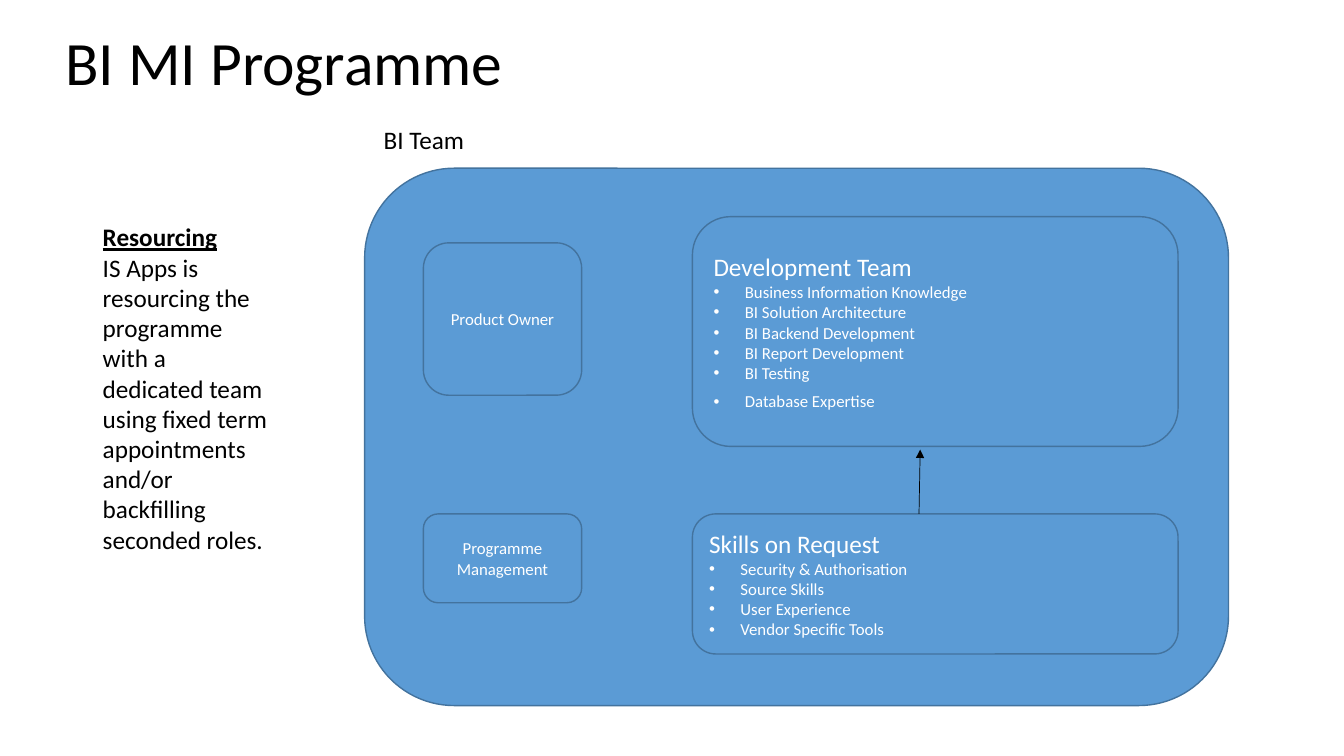
"""Build the BI MI Programme resourcing slide."""
from dataclasses import dataclass

from lxml.etree import SubElement
from pptx import Presentation
from pptx.dml.color import RGBColor
from pptx.enum.shapes import MSO_CONNECTOR, MSO_SHAPE
from pptx.enum.text import MSO_ANCHOR, PP_ALIGN
from pptx.oxml.ns import qn
from pptx.util import Cm, Pt

BLACK, WHITE, BLUE, EDGE = "000000", "FFFFFF", "5B9BD5", "43739E"
INDENT = Cm(0.79)


@dataclass
class Box:
    left: float
    top: float
    width: float
    height: float
    label: str = ""
    head: str = ""
    items: tuple[str, ...] = ()
    gap: float = 0

    def place(self) -> tuple[Cm, Cm, Cm, Cm]:
        return Cm(self.left), Cm(self.top), Cm(self.width), Cm(self.height)


def color(code: str) -> RGBColor:
    return RGBColor.from_string(code)


def write(frame, text: str, *, size: float = 18, ink: str = BLACK,
          bold: bool = False, under: bool = False, align=PP_ALIGN.LEFT,
          bullet: bool = False, before: float = 0, lines: float = 1.0) -> None:
    first = frame.paragraphs[0]
    para = frame.add_paragraph() if first.runs else first
    para.alignment = align
    para.line_spacing = lines
    para.space_before = Pt(before)
    run = para.add_run()
    run.text = text
    font = run.font
    font.name, font.size = "Calibri", Pt(size)
    font.bold, font.underline = bold, under
    font.color.rgb = color(ink)
    if bullet:
        props = para._p.get_or_add_pPr()
        props.set("marL", str(INDENT))
        props.set("indent", str(-INDENT))
        SubElement(props, qn("a:buFont")).set("typeface", "Arial")
        SubElement(props, qn("a:buChar")).set("char", "•")


def note(slide, box: Box, wrap: bool = True, anchor=MSO_ANCHOR.TOP):
    frame = slide.shapes.add_textbox(*box.place()).text_frame
    frame.word_wrap = wrap
    frame.vertical_anchor = anchor
    return frame


def draw(slide, box: Box) -> None:
    shape = slide.shapes.add_shape(MSO_SHAPE.ROUNDED_RECTANGLE, *box.place())
    shape.shadow.inherit = False
    shape.fill.solid()
    shape.fill.fore_color.rgb = color(BLUE)
    shape.line.color.rgb = color(EDGE)
    shape.line.width = Pt(1)
    frame = shape.text_frame
    frame.word_wrap = True
    frame.vertical_anchor = MSO_ANCHOR.MIDDLE
    if box.label:
        write(frame, box.label, size=12, ink=WHITE, align=PP_ALIGN.CENTER)
    if box.head:
        write(frame, box.head, ink=WHITE)
    for item in box.items:
        last = item == box.items[-1]
        write(frame, item, size=12, ink=WHITE, bullet=True,
              before=box.gap if last else 0)


def arrow(slide, x1: float, y1: float, x2: float, y2: float) -> None:
    link = slide.shapes.add_connector(
        MSO_CONNECTOR.STRAIGHT, Cm(x1), Cm(y1), Cm(x2), Cm(y2))
    link.line.color.rgb = color(BLACK)
    link.line.width = Pt(0.5)
    SubElement(link.line._get_or_add_ln(), qn("a:tailEnd")).set("type", "triangle")
    SubElement(link._element.spPr, qn("a:effectLst"))


ROLE, TEAM, LOWER = (10.67, 3.99), (17.45, 12.24), 12.95
BOXES = (
    Box(9.19, 4.24, 21.77, 13.54),
    Box(ROLE[0], 6.12, ROLE[1], 3.84, label="Product Owner"),
    Box(ROLE[0], LOWER, ROLE[1], 2.24, label="Programme Management"),
    Box(TEAM[0], 5.46, TEAM[1], 5.79, head="Development Team", gap=6, items=(
        "Business Information Knowledge", "BI Solution Architecture",
        "BI Backend Development", "BI Report Development", "BI Testing",
        "Database Expertise")),
    Box(TEAM[0], LOWER, TEAM[1], 3.53, head="Skills on Request", items=(
        "Security & Authorisation", "Source Skills", "User Experience",
        "Vendor Specific Tools")),
)


def main() -> None:
    deck = Presentation()
    deck.slide_width, deck.slide_height = Cm(33.87), Cm(19.05)
    slide = deck.slides.add_slide(deck.slide_layouts[6])
    title = note(slide, Box(1.4, -0.18, 29.21, 3.68), anchor=MSO_ANCHOR.MIDDLE)
    write(title, "BI MI Programme", size=44, lines=0.9)
    side = note(slide, Box(2.34, 5.46, 4.75, 8.71))
    write(side, "Resourcing", bold=True, under=True)
    write(side, "IS Apps is resourcing the programme with a dedicated team "
          "using fixed term appointments and/or backfilling seconded roles.")
    for box in BOXES:
        draw(slide, box)
    arrow(slide, 23.16, LOWER, 23.19, 11.33)
    write(note(slide, Box(9.42, 3, 2.57, 1.02), wrap=False), "BI Team")
    deck.save("out.pptx")


if __name__ == "__main__":
    main()
